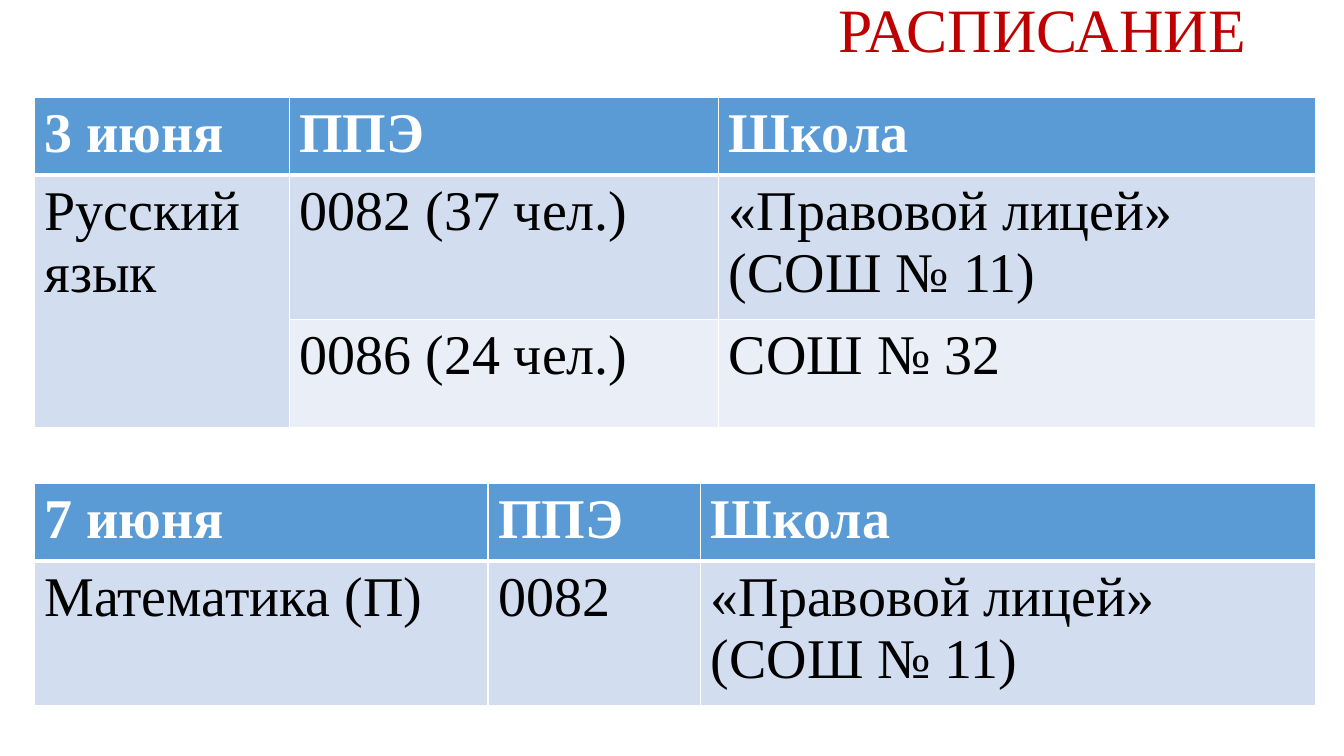
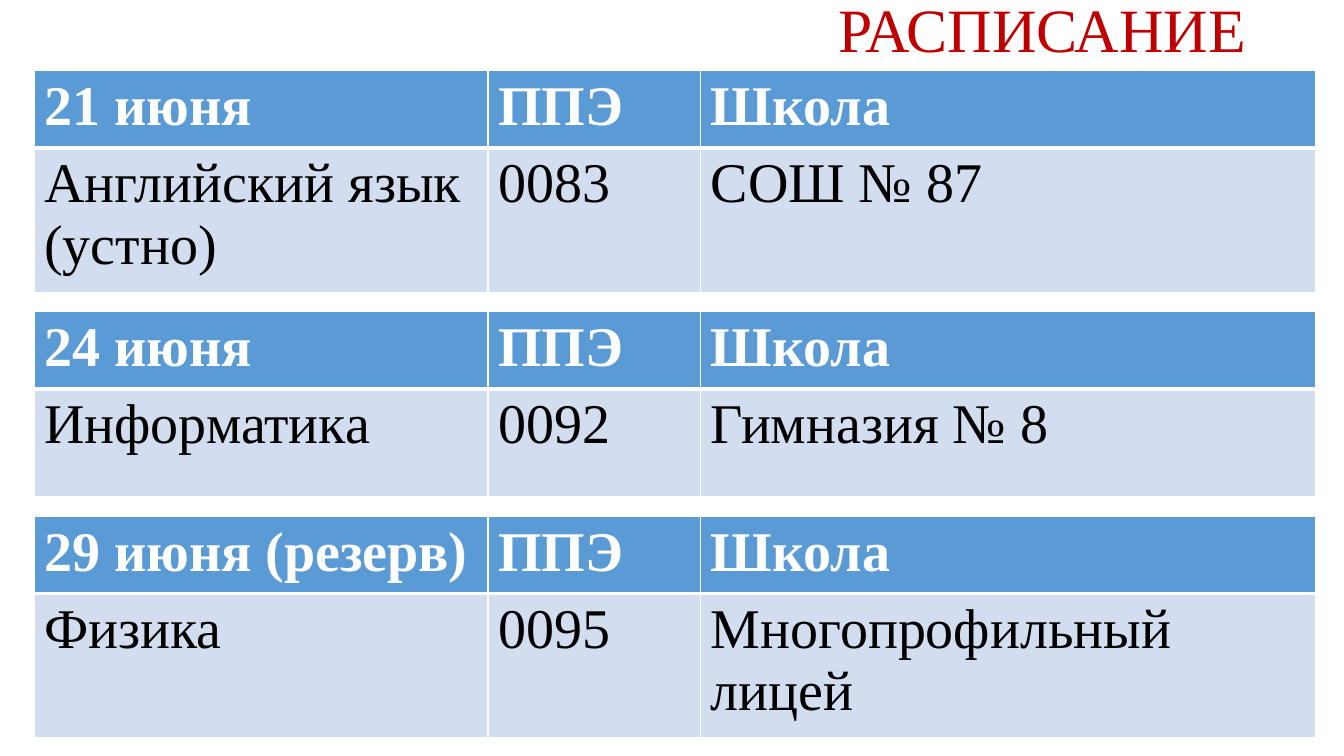
from dataclasses import dataclass

from pptx import Presentation
from pptx import util as u
from pptx.dml.color import RGBColor
from pptx.enum import text
from pptx.oxml.ns import qn
from lxml import etree


@dataclass(frozen=True)
class Theme:
    font: str = "Times New Roman"
    title_size: int = 44
    table_size: int = 40
    title: str = "C00000"
    header: str = "5B9BD5"
    bands: tuple = ("D2DEEF", "EAEFF7")
    header_text: str = "FFFFFF"
    body_text: str = "000000"
    rule: str = "FFFFFF"
    thin: int = 1
    thick: int = 3


class Schedule:
    left = 0.34
    header_height = 0.68
    row_height = 1.07
    columns = (4.5, 2.11, 6.1)

    def __init__(self, theme):
        self.theme = theme
        self.deck = Presentation()
        self.deck.slide_width = u.Inches(13.33)
        self.deck.slide_height = u.Inches(7.5)
        self.slide = None

    def add_slide(self, title):
        self.slide = self.deck.slides.add_slide(self.deck.slide_layouts[6])
        box = self.slide.shapes.add_textbox(
            u.Inches(8.22), u.Inches(-0.16), u.Inches(4.71), u.Inches(0.97))
        frame = box.text_frame
        frame.word_wrap = True
        frame.vertical_anchor = text.MSO_ANCHOR.MIDDLE
        frame.text = title
        heading = frame.paragraphs[0]
        heading.line_spacing = 0.9
        self.style(heading, self.theme.title_size, self.theme.title)

    def style(self, paragraph, size, color, bold=False):
        font = paragraph.font
        font.name = self.theme.font
        font.size = u.Pt(size)
        font.bold = bold
        font.color.rgb = RGBColor.from_string(color)

    def rule_cell(self, cell, top, bottom):
        properties = cell._tc.get_or_add_tcPr()
        thin = self.theme.thin
        for side, width in zip("LRTB", (thin, thin, top, bottom)):
            line = etree.SubElement(properties, qn(f"a:ln{side}"), w=str(u.Pt(width)))
            fill = etree.SubElement(line, qn("a:solidFill"))
            etree.SubElement(fill, qn("a:srgbClr"), val=self.theme.rule)

    def add_cell(self, cell, words, row):
        theme = self.theme
        is_header = row == 0
        self.rule_cell(cell,
                       theme.thick if row == 1 else theme.thin,
                       theme.thick if is_header else theme.thin)
        cell.fill.solid()
        cell.fill.fore_color.rgb = RGBColor.from_string(
            theme.header if is_header else theme.bands[(row - 1) % 2])
        cell.text = words
        self.style(cell.text_frame.paragraphs[0], theme.table_size,
                   theme.header_text if is_header else theme.body_text, is_header)

    def add_exam(self, top, date, subject, places, columns=columns):
        rows = [(date, "ППЭ", "Школа")]
        rows += [(subject if i == 0 else "", *place) for i, place in enumerate(places)]
        height = self.header_height + self.row_height * len(places)
        table = self.slide.shapes.add_table(
            len(rows), len(columns), u.Inches(self.left), u.Inches(top),
            u.Inches(sum(columns)), u.Inches(height)).table
        for column, width in zip(table.columns, columns):
            column.width = u.Inches(width)
        for r, words in enumerate(rows):
            table.rows[r].height = u.Inches(self.row_height if r else self.header_height)
            for c, word in enumerate(words):
                self.add_cell(table.cell(r, c), word, r)
        if len(places) > 1:
            table.cell(1, 0).merge(table.cell(len(places), 0))


def main():
    title = "РАСПИСАНИЕ"
    law_school = "«Правовой лицей» (СОШ № 11)"
    schedule = Schedule(Theme())

    schedule.add_slide(title)
    schedule.add_exam(0.97, "3 июня", "Русский язык",
                      [("0082 (37 чел.)", law_school), ("0086 (24 чел.)", "СОШ № 32")],
                      columns=(2.53, 4.26, 5.92))
    schedule.add_exam(4.8, "7 июня", "Математика (П)", [("0082", law_school)])

    schedule.add_slide(title)
    for top, date, subject, point, school in (
            (0.7, "21 июня", "Английский язык (устно)", "0083", "СОШ № 87"),
            (3.09, "24 июня", "Информатика", "0092", "Гимназия № 8"),
            (5.12, "29 июня (резерв)", "Физика", "0095", "Многопрофильный лицей")):
        schedule.add_exam(top, date, subject, [(point, school)])

    schedule.deck.save("out.pptx")


if __name__ == "__main__":
    main()
